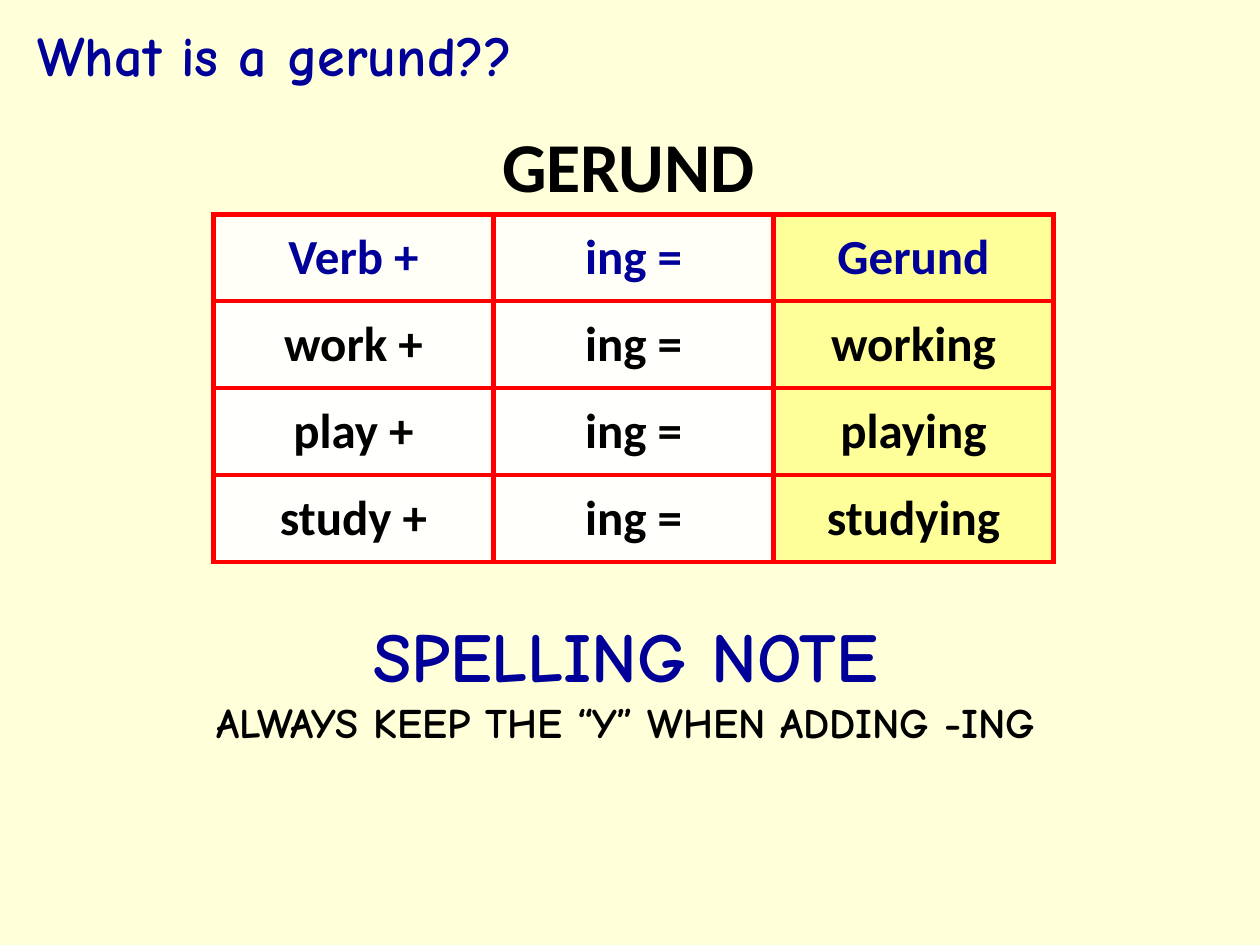
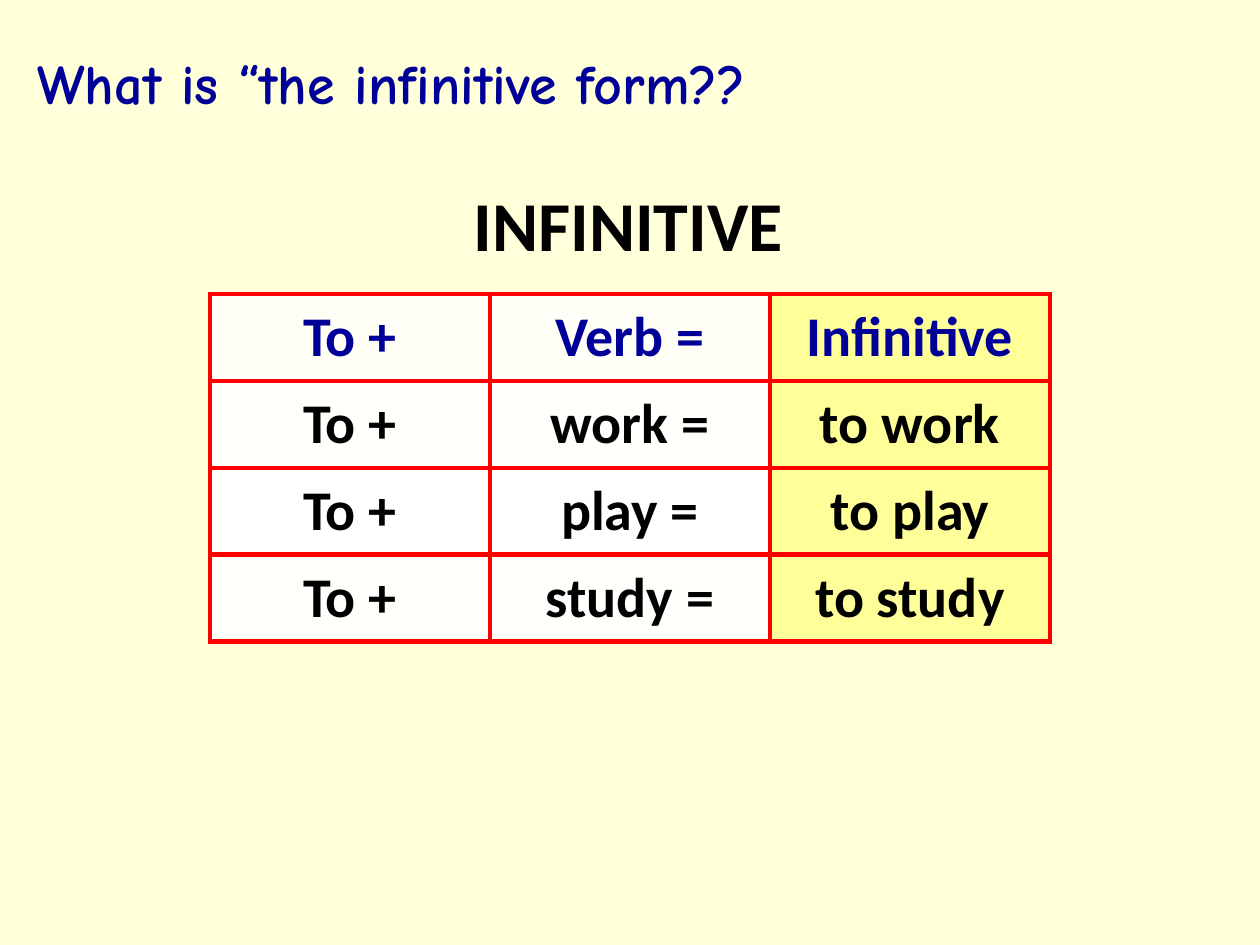
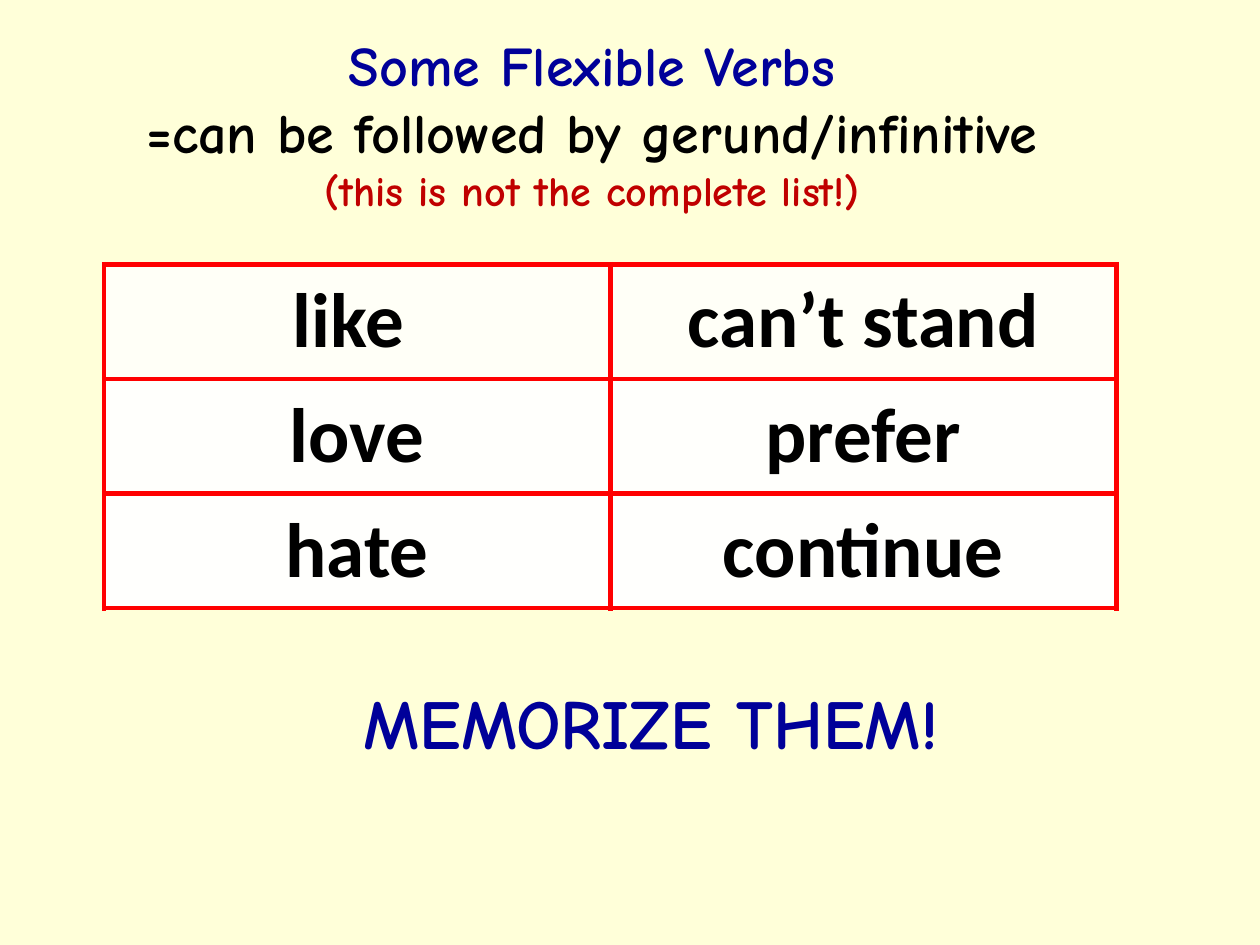
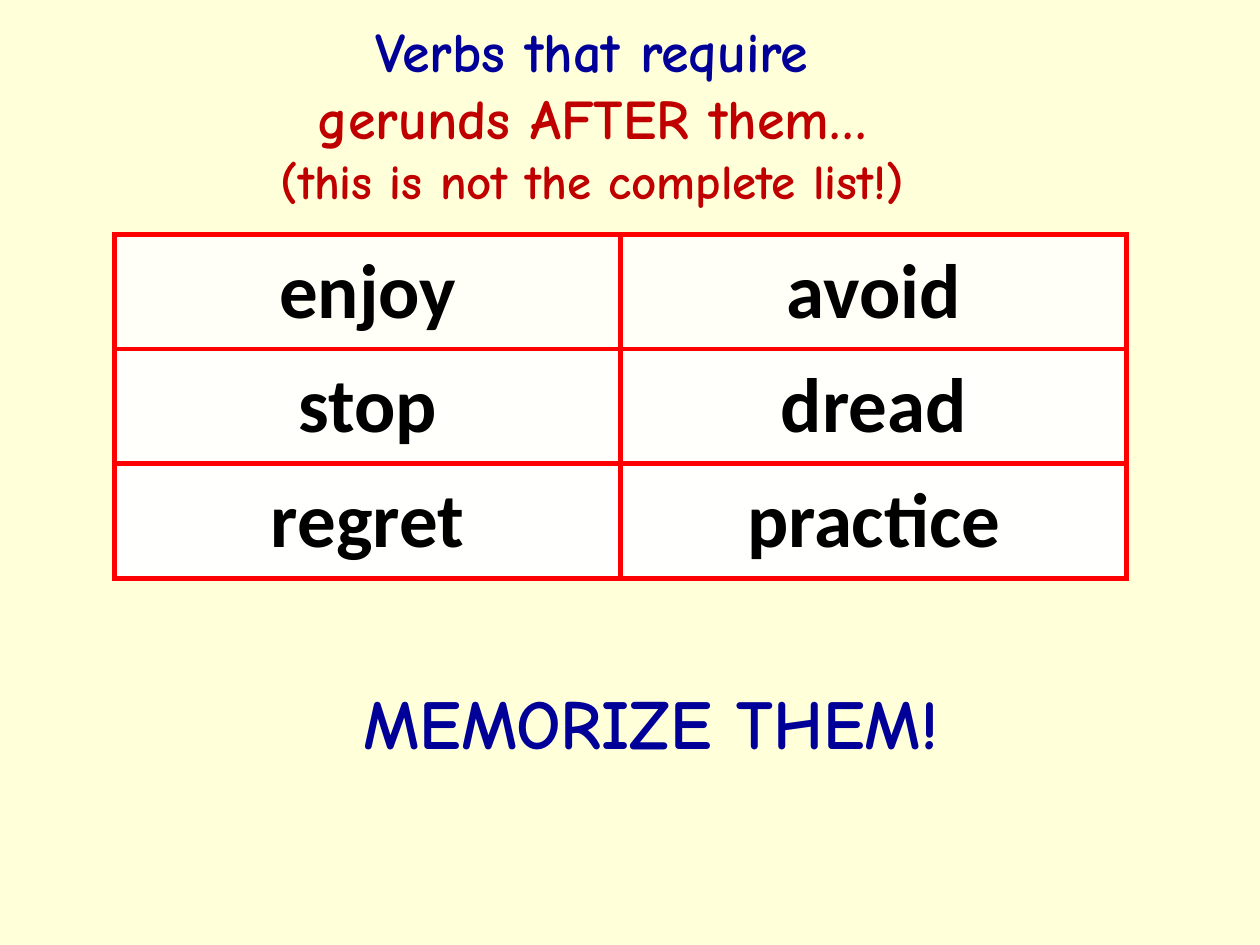
"""Build four grammar slides about gerunds and infinitives."""
from lxml.etree import SubElement
from pptx import Presentation
from pptx.dml.color import RGBColor
from pptx.enum.text import MSO_ANCHOR as ANCHOR, MSO_AUTO_SIZE as AUTO, PP_ALIGN as ALIGN
from pptx.oxml.ns import qn
from pptx.util import Pt

CREAM = RGBColor(0xFF, 0xFF, 0xD9)
NAVY = RGBColor(0x00, 0x00, 0x99)
BLACK = RGBColor(0x00, 0x00, 0x00)
CRIMSON = RGBColor(0xC0, 0x00, 0x00)
RED = RGBColor(0xFF, 0x00, 0x00)
YELLOW = RGBColor(0xFF, 0xFF, 0x99)
ROW_FILLS = [RGBColor(0xFF, 0xFF, b) for b in (0xF7, 0xFC, 0xFD, 0xFC)]
HAND, PLAIN = "Comic Neue", "Calibri"
NOT_COMPLETE = "(this is not the complete list!)"


def add_slide(prs):
    s = prs.slides.add_slide(prs.slide_layouts[6])
    s.background.fill.solid()
    s.background.fill.fore_color.rgb = CREAM
    return s


def write(p, text, size, color, name=HAND, align=ALIGN.CENTER):
    p.alignment = align
    r = p.add_run()
    r.text = text
    for key, value in {"name": name, "size": Pt(size), "bold": True}.items():
        setattr(r.font, key, value)
    r.font.color.rgb = color


def add_text(s, box, lines, name=HAND, align=ALIGN.CENTER, **frame):
    tf = s.shapes.add_textbox(*map(Pt, box)).text_frame
    for key, value in {"word_wrap": True, **frame}.items():
        setattr(tf, key, value)
    for i, line in enumerate(lines):
        p = tf.add_paragraph() if i else tf.paragraphs[0]
        write(p, *line, name, align)


def add_title(s, top, lines, **options):
    options = {"vertical_anchor": ANCHOR.MIDDLE, **options}
    add_text(s, (14.4, top, 648, 71.3), lines, **options)


def add_heading(s, top, text):
    add_text(s, (18, top, 682, 289.5), [(text, 40, BLACK)], PLAIN)


def add_note(s, box, lines):
    add_text(s, box, lines, word_wrap=False, auto_size=AUTO.SHAPE_TO_FIT_TEXT)


def add_memorize(s):
    add_note(s, (176.4, 384.5, 391.7, 55.4), [("MEMORIZE THEM!", 40, NAVY)])


def add_borders(cell):
    tc_pr = cell._tc.get_or_add_tcPr()
    for i, side in enumerate(("lnL", "lnR", "lnT", "lnB")):
        ln = tc_pr.makeelement(qn(f"a:{side}"), {"w": str(Pt(3))})
        fill = SubElement(ln, qn("a:solidFill"))
        SubElement(fill, qn("a:srgbClr"), val=str(RED))
        tc_pr.insert(i, ln)


def add_grid(s, left, top, col_width, row_height, size, rows, formula=False):
    """Draw a bordered word table; a formula table has a header row and a result column."""
    n_rows, n_cols = len(rows), len(rows[0])
    table = s.shapes.add_table(n_rows, n_cols, Pt(left), Pt(top),
                               Pt(col_width * n_cols), Pt(row_height * n_rows)).table
    table.first_row = table.horz_banding = False
    for i, words in enumerate(rows):
        table.rows[i].height = Pt(row_height)
        for j, word in enumerate(words):
            cell = table.cell(i, j)
            cell.vertical_anchor = ANCHOR.MIDDLE
            cell.fill.solid()
            result = formula and j == n_cols - 1
            cell.fill.fore_color.rgb = YELLOW if result else ROW_FILLS[i]
            color = NAVY if formula and i == 0 else BLACK
            write(cell.text_frame.paragraphs[0], word, size, color, PLAIN)
            add_borders(cell)
    for col in table.columns:
        col.width = Pt(col_width)


def add_formula(s, left, top, size, rows):
    add_grid(s, left, top, 160, 49.68, size, rows, formula=True)


def add_verbs(s, left, top, rows):
    add_grid(s, left, top, 289.2, 65.52, 44, rows)


def main():
    prs = Presentation()
    prs.slide_width, prs.slide_height = Pt(720), Pt(540)

    s = add_slide(prs)
    add_title(s, 11.5, [("What is a gerund??", 32, NAVY)], align=ALIGN.LEFT,
              vertical_anchor=ANCHOR.TOP, margin_top=0)
    add_heading(s, 66.5, "GERUND")
    verbs = ["work", "play", "study"]
    add_formula(s, 122, 122.4, 28, [("Verb +", "ing =", "Gerund")]
                + [(f"{v} +", "ing =", f"{v}ing") for v in verbs])
    add_note(s, (70.5, 346.3, 574, 85),
             [("SPELLING NOTE", 40, NAVY),
              ("ALWAYS KEEP THE “Y” WHEN ADDING -ING", 24, BLACK)])

    s = add_slide(prs)
    add_title(s, 11.5, [("What is “the infinitive form??", 32, NAVY)], align=ALIGN.LEFT)
    add_heading(s, 100, "INFINITIVE")
    add_formula(s, 120, 168, 32, [("To +", "Verb =", "Infinitive")]
                + [("To +", f"{v} =", f"to {v}") for v in verbs])

    s = add_slide(prs)
    add_title(s, 34.5, [("Some Flexible Verbs", 32, NAVY),
                        ("=can be followed by gerund/infinitive", 32, BLACK),
                        (NOT_COMPLETE, 24, CRIMSON)])
    add_verbs(s, 59.5, 151, [("like ", "can’t stand"), ("love", "prefer"),
                             ("hate", "continue")])
    add_memorize(s)

    s = add_slide(prs)
    add_title(s, 28.8, [("Verbs that require", 32, NAVY),
                        ("gerunds AFTER them…", 32, CRIMSON),
                        (NOT_COMPLETE, 28, CRIMSON)])
    add_verbs(s, 65.5, 134, [("enjoy", "avoid"), ("stop", "dread"),
                             ("regret", "practice")])
    add_memorize(s)

    prs.save("out.pptx")


if __name__ == "__main__":
    main()
